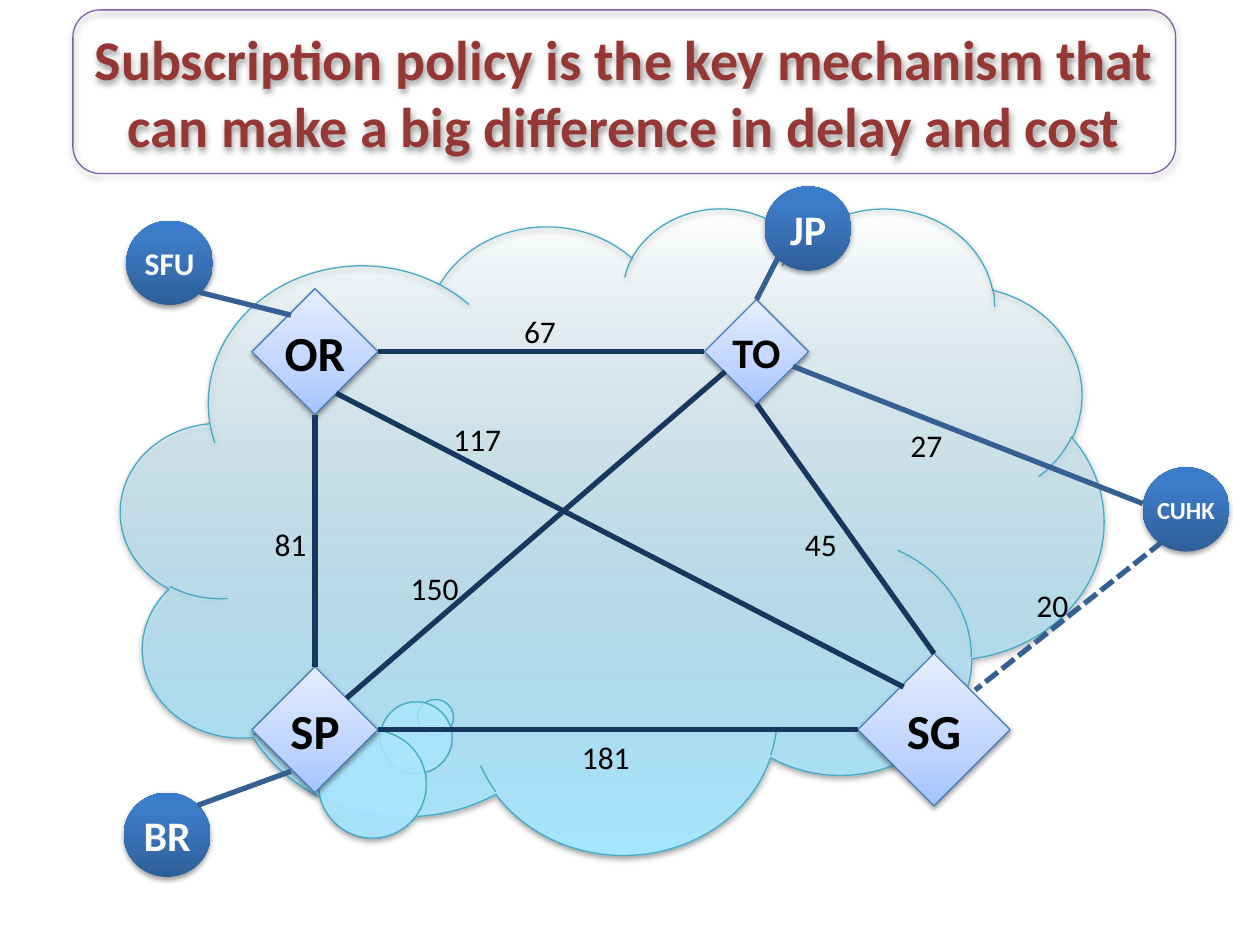
from lxml import etree
from pptx import Presentation
from pptx import util as u
from pptx.dml.color import RGBColor
from pptx.enum import dml, shapes, text
from pptx.oxml.ns import qn

FONT = "Calibri"
COLORS = {
    "title": "953735", "title_line": "7D60A0", "cloud_line": "46AAC5",
    "hub_line": "4B7EBC", "hub_link": "17375E", "client_link": "376092",
    "black": "000000", "white": "FFFFFF",
}
# Gradient stops: position %, colour, opacity %
GRADIENTS = {
    "cloud": [(0, "A7E6FF", 100), (100, "C1EDFF", 0), (100, "E7F8FF", 100)],
    "hub": [(0, "A4C4FF", 100), (35, "BFD4FF", 100), (100, "E6EEFF", 100)],
    "client": [(0, "2F5F99", 100), (80, "3D7CC7", 100), (100, "3A7CCB", 100)],
}
CLIENT_SIZE = (1.75, 1.7)

# Positions are in cm from the corner of the network box.
HUBS = {  # name: centre x, centre y, size, font size
    "OR": (3.95, 3.39, 2.54, 28),
    "SP": (3.95, 11.01, 2.54, 28),
    "TO": (12.85, 3.39, 2.1, 24),
    "SG": (16.43, 11.01, 3.07, 28),
}
CLIENTS = {  # name: centre x, centre y, font size
    "JP": (13.89, 0.91, 24),
    "SFU": (1.02, 1.6, 18),
    "BR": (0.97, 13.13, 24),
    "CUHK": (21.51, 6.57, 14),
}
TOP, LEFT, BOTTOM, RIGHT = range(4)
# A link end is a side, or an offset from the centre as a share of the size.
HUB_LINKS = [
    ("OR", RIGHT, "TO", LEFT),
    ("OR", BOTTOM, "SP", TOP),
    ("TO", BOTTOM, "SG", TOP),
    ("SP", RIGHT, "SG", LEFT),
    ("SP", (0.25, -0.25), "TO", (-0.3, 0.19)),
    ("OR", (0.17, 0.33), "SG", (-0.2, -0.28)),
]
CLIENT_LINKS = [
    ("SP", (-0.19, 0.33), "BR", (0.35, -0.35)),
    ("OR", (-0.19, -0.29), "SFU", (0.35, 0.35)),
    ("JP", (-0.35, 0.35), "TO", TOP),
    ("CUHK", (-0.5, -0.07), "TO", (0.35, 0.14)),
]
DASHED_LINKS = [("CUHK", (-0.27, 0.38), "SG", (0.27, -0.26))]
DELAYS = [  # label, centre x, centre y
    ("67", 8.5, 2.98), ("117", 7.24, 5.16), ("150", 6.38, 8.16),
    ("181", 9.83, 11.57), ("81", 3.47, 7.27), ("45", 14.16, 7.27),
    ("20", 18.83, 8.49), ("27", 16.29, 5.27),
]


def rgb(name):
    return RGBColor.from_string(COLORS[name])


def write_text(shape, words, size, color="black", bold=False, align=None,
               inset=None, wrap=True):
    frame = shape.text_frame
    frame.word_wrap = wrap
    if inset is not None:
        frame.margin_left = frame.margin_right = u.Cm(inset)
        frame.margin_top = frame.margin_bottom = u.Cm(inset)
    paragraph = frame.paragraphs[0]
    paragraph.alignment = align
    run = paragraph.add_run()
    run.text = words
    run.font.name = FONT
    run.font.size = u.Pt(size)
    run.font.bold = bold
    run.font.color.rgb = rgb(color)


def add_color(parent, color, opacity):
    element = etree.SubElement(parent, qn("a:srgbClr"), val=color)
    if opacity < 100:
        etree.SubElement(element, qn("a:alpha"), val=str(opacity * 1000))


def add_filled_shape(slide, kind, box, gradient=None, line=None):
    """Add a shape with a bottom-to-top gradient and a soft shadow below."""
    shape = slide.shapes.add_shape(kind, *map(u.Cm, box))
    if gradient:
        shape.fill.gradient()
        shape.fill.gradient_angle = 90
        stops = shape._element.spPr.find(".//" + qn("a:gsLst"))
        stops.clear()
        for position, color, opacity in GRADIENTS[gradient]:
            stop = etree.SubElement(stops, qn("a:gs"), pos=str(position * 1000))
            add_color(stop, color, opacity)
    else:
        shape.fill.background()
    if line:
        shape.line.color.rgb = rgb(line)
        shape.line.width = u.Pt(0.75)
    else:
        shape.line.fill.background()
    shape.shadow.inherit = False
    effects = shape._element.spPr.find(qn("a:effectLst"))
    shadow = etree.SubElement(
        effects, qn("a:outerShdw"), blurRad=str(u.Pt(3.1)),
        dist=str(u.Pt(1.6)), dir="5400000", rotWithShape="0")
    add_color(shadow, COLORS["black"], 38)
    return shape


def add_node(slide, kind, center, size, name, font_size, gradient,
             line=None, color="black"):
    box = (center[0] - size[0] / 2, center[1] - size[1] / 2, *size)
    shape = add_filled_shape(slide, kind, box, gradient, line)
    shape.text_frame.vertical_anchor = text.MSO_ANCHOR.MIDDLE
    write_text(shape, name, font_size, color, bold=True, inset=0, wrap=False,
               align=text.PP_ALIGN.CENTER)
    return shape


def link_point(node, end):
    offset = (0, 0) if isinstance(end, int) else end
    return (int(node.left + node.width * (0.5 + offset[0])),
            int(node.top + node.height * (0.5 + offset[1])))


def add_link(slide, nodes, link, color, dash=None):
    start, start_end, finish, finish_end = link
    connector = slide.shapes.add_connector(
        shapes.MSO_CONNECTOR.STRAIGHT,
        *link_point(nodes[start], start_end),
        *link_point(nodes[finish], finish_end))
    if isinstance(start_end, int):
        connector.begin_connect(nodes[start], start_end)
    if isinstance(finish_end, int):
        connector.end_connect(nodes[finish], finish_end)
    connector.line.color.rgb = rgb(color)
    connector.line.width = u.Pt(3)
    if dash:
        connector.line.dash_style = dash
    etree.SubElement(connector._element.spPr, qn("a:effectLst"))


def add_title(slide, box):
    shape = add_filled_shape(
        slide, shapes.MSO_SHAPE.FLOWCHART_ALTERNATE_PROCESS, box,
        line="title_line")
    shape.text_frame.vertical_anchor = text.MSO_ANCHOR.MIDDLE
    write_text(shape, "Subscription policy is the key mechanism that can make "
               "a big difference in delay and cost", 32, "title", bold=True,
               align=text.PP_ALIGN.CENTER)


def add_network(slide, box):
    """Draw the cloud, its hubs and clients, and the delays between them."""
    left, top, width, height = box
    cloud = add_filled_shape(slide, shapes.MSO_SHAPE.CLOUD_CALLOUT,
                             (left + 0.04, top + 0.47, 19.81, 13.03),
                             "cloud", "cloud_line")
    cloud.adjustments[0], cloud.adjustments[1] = -0.18, 0.29

    nodes = {}
    for name, (x, y, size, font_size) in HUBS.items():
        nodes[name] = add_node(
            slide, shapes.MSO_SHAPE.FLOWCHART_DECISION, (left + x, top + y),
            (size, size), name, font_size, "hub", "hub_line")
    for link in HUB_LINKS:
        add_link(slide, nodes, link, "hub_link")
    for name, (x, y, font_size) in CLIENTS.items():
        nodes[name] = add_node(
            slide, shapes.MSO_SHAPE.OVAL, (left + x, top + y), CLIENT_SIZE,
            name, font_size, "client", color="white")
    for link in CLIENT_LINKS:
        add_link(slide, nodes, link, "client_link")
    for link in DASHED_LINKS:
        add_link(slide, nodes, link, "client_link", dml.MSO_LINE.SQUARE_DOT)

    for delay, x, y in DELAYS:
        label_width, label_height = 0.51 + 0.33 * len(delay), 1.02
        label = slide.shapes.add_textbox(
            u.Cm(left + x - label_width / 2), u.Cm(top + y - label_height / 2),
            u.Cm(label_width), u.Cm(label_height))
        write_text(label, delay, 18, wrap=False)


def main():
    presentation = Presentation()
    presentation.slide_width, presentation.slide_height = u.Cm(25.4), u.Cm(19.05)
    slide = presentation.slides.add_slide(presentation.slide_layouts[6])
    add_network(slide, (2.4, 3.7, 22.4, 14))
    add_title(slide, (1.47, 0.2, 22.23, 3.3))
    presentation.save("out.pptx")


if __name__ == "__main__":
    main()
